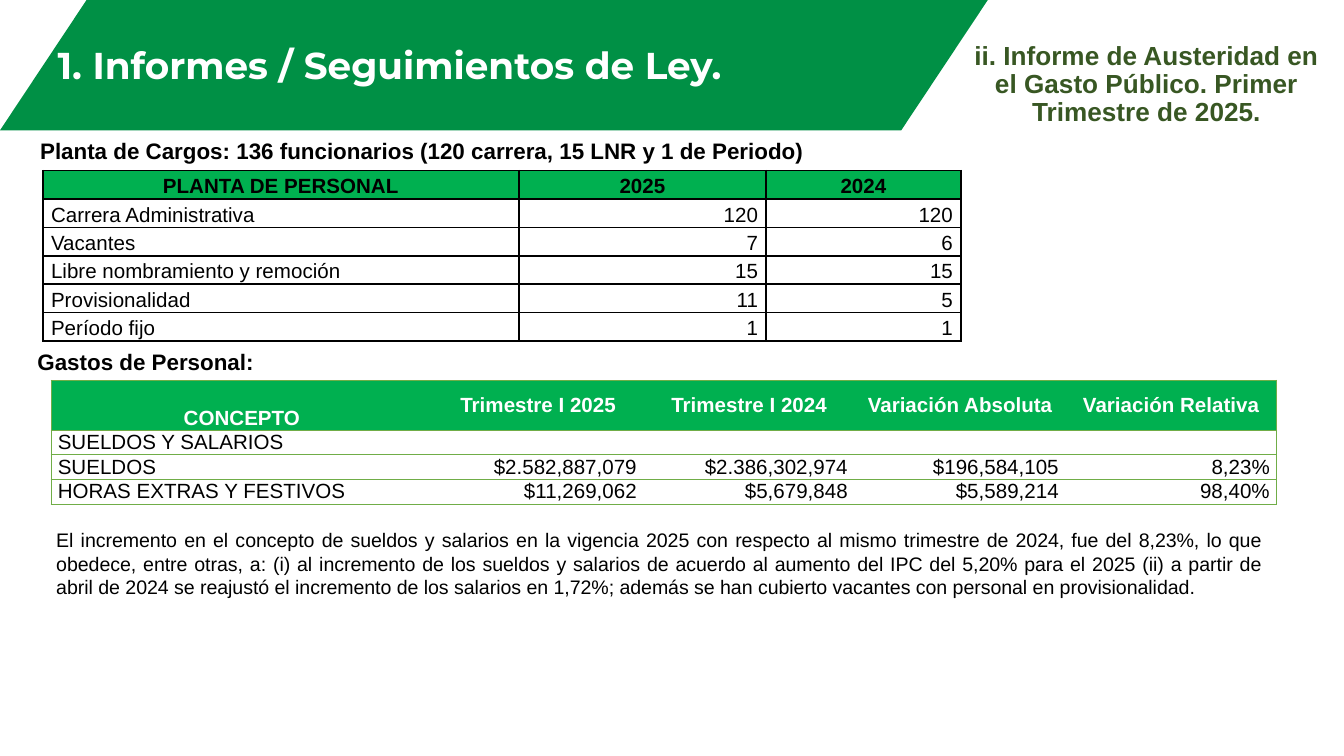
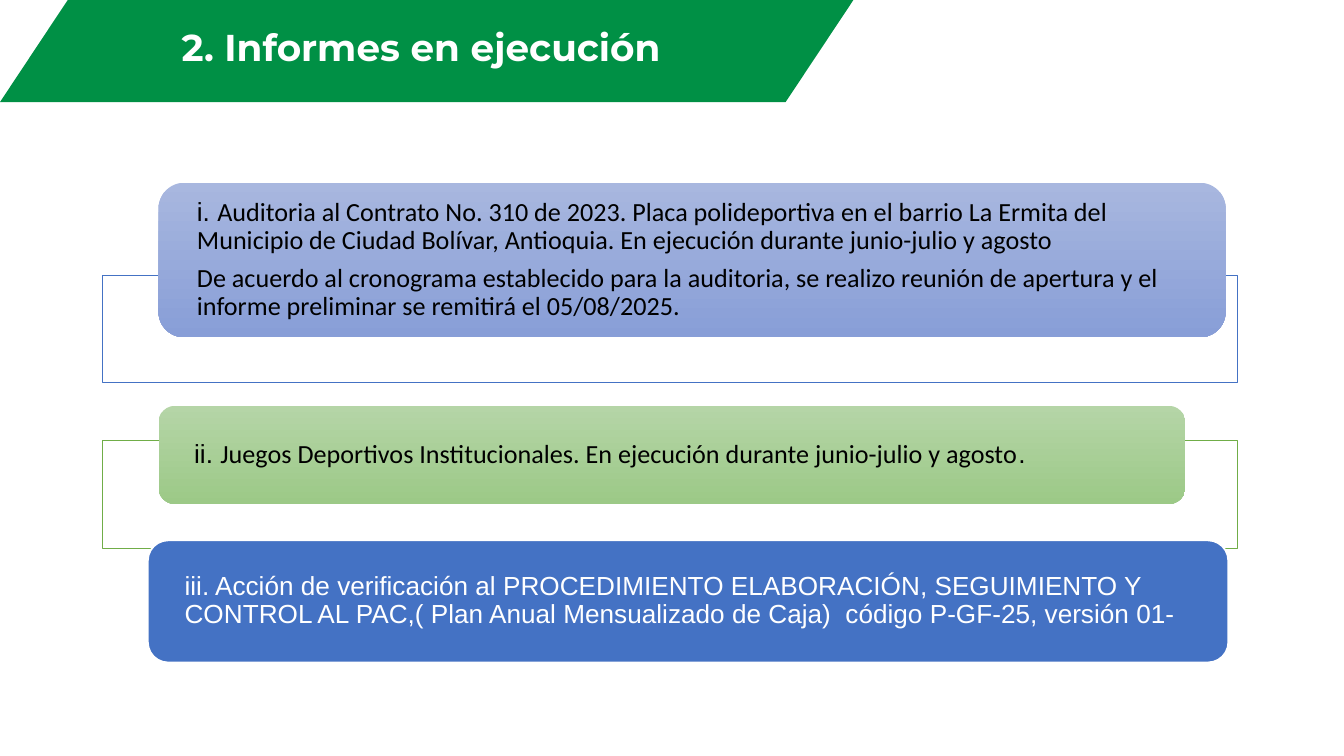
from lxml import etree
from pptx import Presentation
from pptx.dml.color import RGBColor
from pptx.enum.shapes import MSO_SHAPE
from pptx.enum.text import MSO_ANCHOR, MSO_AUTO_SIZE, PP_ALIGN
from pptx.oxml.ns import qn
from pptx.util import Inches, Pt

LEFT, CENTER, RIGHT, JUSTIFY = (
    PP_ALIGN.LEFT, PP_ALIGN.CENTER, PP_ALIGN.RIGHT, PP_ALIGN.JUSTIFY)
TOP, MIDDLE, BOTTOM = MSO_ANCHOR.TOP, MSO_ANCHOR.MIDDLE, MSO_ANCHOR.BOTTOM
SLANT, RECT, ROUND = (
    MSO_SHAPE.PARALLELOGRAM, MSO_SHAPE.RECTANGLE, MSO_SHAPE.ROUNDED_RECTANGLE)
NO_FIT = MSO_AUTO_SIZE.NONE
TITLE_ONLY = 5
WIDE = 10

COLORS = {
    "band": "009045", "head": "00B050", "rule": "70AD47", "note": "385723",
    "blue": "4472C4", "black": "000000", "white": "FFFFFF",
    "sky": "A8B7DF", "dusk": "889ED7", "mint": "B5D5A7", "leaf": "9CC987",
}


def rgb(name):
    return RGBColor.from_string(COLORS[name])


def write(frame, text, size=14, font="Arial", color="black", bold=False,
          align=LEFT, anchor=TOP, space=1.0, gap=0, inset=(0.1, 0.05)):
    """Fill a frame; text is a string or a list of paragraphs, each a list of (text, font)."""
    paras = [[(text, font)]] if isinstance(text, str) else text
    frame.word_wrap = True
    frame.vertical_anchor = anchor
    frame.margin_left = frame.margin_right = Inches(inset[0])
    frame.margin_top = frame.margin_bottom = Inches(inset[1])
    for i, runs in enumerate(paras):
        para = frame.add_paragraph() if i else frame.paragraphs[0]
        para.alignment = align
        para.line_spacing = space
        if i:
            para.space_before = Pt(gap)
        for words, face in runs:
            run = para.add_run()
            run.text = words
            run.font.name = face
            run.font.size = Pt(size)
            run.font.bold = bold
            run.font.color.rgb = rgb(color)


def blank(cell, size):
    """Keep an empty cell as low as a line of the given size."""
    para = cell.text_frame.paragraphs[0]
    end = etree.SubElement(para._p, qn("a:endParaRPr"))
    end.set("sz", str(size * 100))


def edge(cell, side, color=None, width=1.0):
    """Draw one side of a cell (L, R, T or B), or clear it when no color is given."""
    line = etree.SubElement(cell._tc.get_or_add_tcPr(), qn("a:ln" + side))
    line.set("w", str(Pt(width)))
    if color:
        solid = etree.SubElement(line, qn("a:solidFill"))
        etree.SubElement(solid, qn("a:srgbClr")).set("val", COLORS[color])
    else:
        etree.SubElement(line, qn("a:noFill"))


class Deck:
    def __init__(self):
        self.prs = Presentation()
        self.prs.slide_width = Inches(WIDE)
        self.prs.slide_height = Inches(WIDE * 9 / 16)
        self.slide = None

    def page(self, title, band, box):
        """Start a slide with its green band and title."""
        layout = self.prs.slide_layouts[TITLE_ONLY]
        self.slide = self.prs.slides.add_slide(layout)
        shape = self.shape(SLANT, (0, 0, *band), fill="band")
        shape.adjustments[0] = 0.664
        head = self.slide.shapes.title
        shape._element.addnext(head._element)
        head.left, head.top, head.width, head.height = map(Inches, box)
        head.text_frame.auto_size = NO_FIT
        write(head.text_frame, title, size=20, font="Montserrat", color="white",
              bold=True, align=CENTER, anchor=BOTTOM, space=0.9)

    def shape(self, kind, box, fill, line=None, width=0.5):
        """Add a shape; fill is a color name or a (top, bottom) pair."""
        shape = self.slide.shapes.add_shape(kind, *map(Inches, box))
        shape.shadow.inherit = False
        if isinstance(fill, tuple):
            shape.fill.gradient()
            shape.fill.gradient_angle = 270
            for stop, name in zip(shape.fill.gradient_stops, fill):
                stop.color.rgb = rgb(name)
        else:
            shape.fill.solid()
            shape.fill.fore_color.rgb = rgb(fill)
        if line:
            shape.line.color.rgb = rgb(line)
            shape.line.width = Pt(width)
        else:
            shape.line.fill.background()
        return shape

    def card(self, box, fill, text, color="black", line=None):
        shape = self.shape(ROUND, box, fill, line, width=1)
        write(shape.text_frame, text, color=color, anchor=MIDDLE,
              space=0.9, gap=5, inset=(0.23, 0))

    def text(self, box, text, **style):
        shape = self.slide.shapes.add_textbox(*map(Inches, box))
        write(shape.text_frame, text, **style)

    def table(self, spot, cols, rows, data, line, width, grid, **style):
        """Add a table with a green head; grid tells if inner upright lines show."""
        frame = self.slide.shapes.add_table(
            len(rows), len(cols), *map(Inches, (*spot, sum(cols), sum(rows))))
        table = frame.table
        table.horz_banding = False
        for col, size in zip(table.columns, cols):
            col.width = Inches(size)
        for row, size in zip(table.rows, rows):
            row.height = Inches(size)
        last = len(cols) - 1
        for r, values in enumerate(data):
            for c, value in enumerate(values):
                cell = table.cell(r, c)
                shown = {"L": grid or c == 0, "R": grid or c == last,
                         "T": True, "B": True}
                for side, show in shown.items():
                    edge(cell, side, line if show else None, width)
                if r == 0:
                    cell.fill.solid()
                    cell.fill.fore_color.rgb = rgb("head")
                else:
                    cell.fill.background()
                self.fill(cell, value, r == 0, c == 0, **style)

    def fill(self, cell, value, head, first, ink, inset, space=1.0, low=False):
        """Write one cell; low puts the first heading at the foot of its cell."""
        align = CENTER if head else LEFT if first else RIGHT
        if value:
            write(cell.text_frame, value, size=11, bold=head, align=align,
                  color=ink if head else "black", space=space)
        else:
            blank(cell, 11)
        cell.margin_left = cell.margin_right = Inches(inset)
        cell.margin_top = cell.margin_bottom = 0
        cell.vertical_anchor = BOTTOM if low and head and first else MIDDLE


STAFF = [
    ("PLANTA DE PERSONAL", "2025", "2024"),
    ("Carrera Administrativa", "120", "120"),
    ("Vacantes", "7", "6"),
    ("Libre nombramiento y remoción", "15", "15"),
    ("Provisionalidad", "11", "5"),
    ("Período fijo", "1", "1"),
]
COSTS = [
    ("CONCEPTO", "Trimestre I 2025", "Trimestre I 2024",
     "Variación Absoluta", "Variación Relativa"),
    ("SUELDOS Y SALARIOS", "", "", "", ""),
    ("SUELDOS", "$2.582,887,079", "$2.386,302,974", "$196,584,105", "8,23%"),
    ("HORAS EXTRAS Y FESTIVOS", "$11,269,062", "$5,679,848", "$5,589,214", "98,40%"),
]
REASON = (
    "El incremento en el concepto de sueldos y salarios en la vigencia 2025 con "
    "respecto al mismo trimestre de 2024, fue del 8,23%, lo que obedece, entre "
    "otras, a: (i) al incremento de los sueldos y salarios de acuerdo al aumento "
    "del IPC del 5,20% para el 2025 (ii) a partir de abril de 2024 se reajustó el "
    "incremento de los salarios en 1,72%; además se han cubierto vacantes con "
    "personal en provisionalidad.")
COURT = [
    [("i. ", "Arial"),
     ("Auditoria al Contrato No. 310 de 2023. Placa polideportiva en el barrio "
      "La Ermita del Municipio de Ciudad Bolívar, Antioquia. En ejecución "
      "durante junio-julio y agosto", "Calibri")],
    [("De acuerdo al cronograma establecido para la auditoria, se realizo reunión "
      "de apertura y el informe preliminar se remitirá el 05/08/2025.", "Calibri")],
]
GAMES = [
    [("ii. ", "Arial"),
     ("Juegos Deportivos Institucionales. En ejecución durante junio-julio y "
      "agosto", "Calibri"),
     (".", "Arial")],
]
CASH = (
    "iii. Acción de verificación al PROCEDIMIENTO ELABORACIÓN, SEGUIMIENTO Y "
    "CONTROL AL PAC,( Plan Anual Mensualizado de Caja)  código P-GF-25, versión 01-")


def main():
    deck = Deck()

    deck.page("1. Informes / Seguimientos de Ley.", (7.35, 0.97), (0, 0.27, 5.8, 0.43))
    deck.text((7.14, 0.27, 2.78, 0.74),
              "ii. Informe de Austeridad en el Gasto Público. Primer Trimestre de 2025.",
              color="note", bold=True, align=CENTER, space=0.9)
    label = {"size": 12, "bold": True, "align": JUSTIFY}
    deck.text((0.2, 0.97, 6.01, 0.3),
              "Planta de Cargos: 136 funcionarios (120 carrera, 15 LNR y 1 de Periodo)",
              **label)
    deck.table((0.32, 1.27), [3.54, 1.84, 1.45], [0.21] * 6, STAFF,
               "black", 1, True, ink="black", inset=0.06, space=1.15)
    deck.text((0.18, 2.54, 1.82, 0.3), "Gastos de Personal:", **label)
    deck.table((0.38, 2.83), [2.84] + [1.57] * 4, [0.37] + [0.18] * 3, COSTS,
               "rule", 0.5, False, ink="white", inset=0.05, low=True)
    deck.text((0.32, 3.88, 9.18, 0.63), REASON, size=10.5, align=JUSTIFY)

    deck.page("2. Informes en ejecución", (6.35, 0.76), (0.31, 0.1, 5.65, 0.47))
    for top, line in ((2.05, "blue"), (3.28, "rule")):
        deck.shape(RECT, (0.76, top, 8.45, 0.8), "white", line)
    deck.card((1.18, 1.36, 7.94, 1.15), ("sky", "dusk"), COURT)
    deck.card((1.18, 3.02, 7.64, 0.73), ("mint", "leaf"), GAMES)
    deck.card((1.1, 4.02, 8.04, 0.91), "blue", CASH, color="white", line="white")

    deck.prs.save("out.pptx")


if __name__ == "__main__":
    main()
